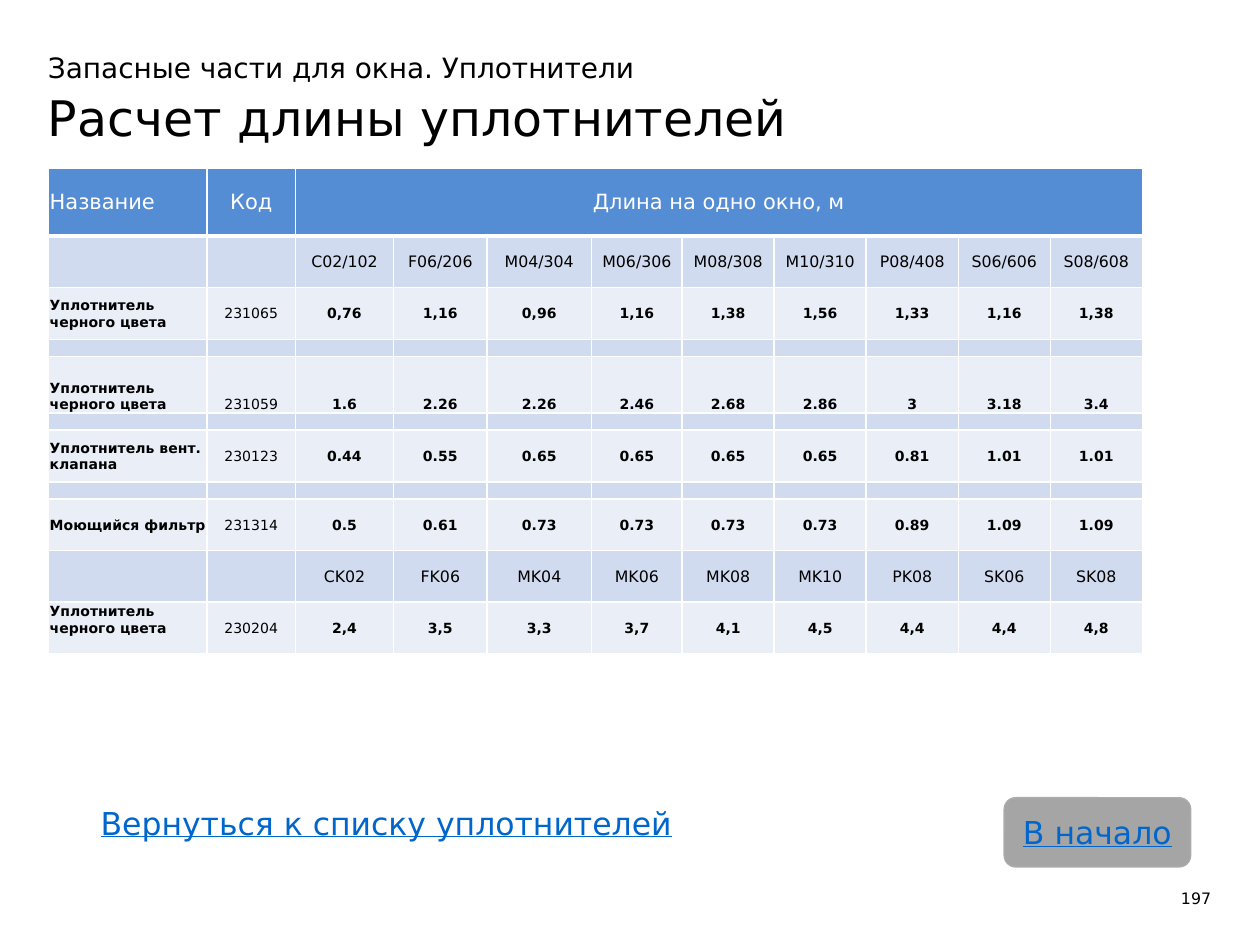
from lxml import etree
from pptx import Presentation
from pptx.dml.color import RGBColor
from pptx.enum.shapes import MSO_SHAPE as Preset
from pptx.enum.text import MSO_ANCHOR as Anchor, MSO_AUTO_SIZE as AutoSize, PP_ALIGN as Align
from pptx.oxml.ns import qn
from pptx.util import Pt

FONT = "DejaVu Sans"
BLACK = RGBColor(0, 0, 0)
WHITE = RGBColor(255, 255, 255)
HEADER_BLUE = RGBColor(0x54, 0x8D, 0xD4)
BAND_DARK = RGBColor(0xD1, 0xDB, 0xEF)
BAND_LIGHT = RGBColor(0xE9, 0xEE, 0xF7)
LINK_BLUE = RGBColor(0, 0x66, 0xCC)
BUTTON_GRAY = RGBColor(0xA5, 0xA5, 0xA5)
BUTTON_EDGE = RGBColor(0xAC, 0xAC, 0xAC)

COLUMN_WIDTHS = [90.7, 50.4, 56.2, 53.3, 59.8, 51.8] + [52.6] * 5
SEAL = "Уплотнитель черного цвета"
SPACER = (9.8, "spacer", [])
ROWS = [
    (38.9, "header", ["Название", "Код", "Длина на одно окно, м"]),
    (29.5, "sizes", ["", "", "C02/102", "F06/206", "M04/304", "M06/306", "M08/308",
                     "M10/310", "P08/408", "S06/606", "S08/608"]),
    (29.5, "lengths", [SEAL, "231065", "0,76", "1,16", "0,96", "1,16", "1,38",
                       "1,56", "1,33", "1,16", "1,38"]),
    SPACER,
    (32.4, "low lengths", [SEAL, "231059", "1.6", "2.26", "2.26", "2.46", "2.68",
                           "2.86", "3", "3.18", "3.4"]),
    SPACER,
    (29.5, "lengths", ["Уплотнитель вент. клапана", "230123", "0.44", "0.55", "0.65",
                       "0.65", "0.65", "0.65", "0.81", "1.01", "1.01"]),
    SPACER,
    (29.5, "lengths", ["Моющийся фильтр", "231314", "0.5", "0.61", "0.73", "0.73",
                       "0.73", "0.73", "0.89", "1.09", "1.09"]),
    (29.5, "sizes", ["", "", "CK02", "FK06", "MK04", "MK06", "MK08", "MK10",
                     "PK08", "SK06", "SK08"]),
    (29.5, "lengths", [SEAL, "230204", "2,4", "3,5", "3,3", "3,7", "4,1", "4,5",
                       "4,4", "4,4", "4,8"]),
]
ROW_STYLES = {
    "header": (HEADER_BLUE, WHITE, 12),
    "sizes": (BAND_DARK, BLACK, 9),
    "spacer": (BAND_DARK, BLACK, 7),
    "lengths": (BAND_LIGHT, BLACK, 8),
    "low lengths": (BAND_LIGHT, BLACK, 8),
}


def write(paragraph, text, size, color=BLACK, bold=False, underline=False, align=Align.LEFT):
    paragraph.alignment = align
    run = paragraph.add_run()
    run.text = text
    run.font.name = FONT
    run.font.size = Pt(size)
    run.font.bold = bold
    run.font.underline = underline
    run.font.color.rgb = color


def set_borders(cell, bottom_width):
    properties = cell._tc.get_or_add_tcPr()
    widths = {"a:lnL": 1, "a:lnR": 1, "a:lnT": 1, "a:lnB": bottom_width}
    for position, (tag, width) in enumerate(widths.items()):
        line = etree.Element(qn(tag), w=str(Pt(width)))
        fill = etree.SubElement(line, qn("a:solidFill"))
        etree.SubElement(fill, qn("a:srgbClr"), val=str(WHITE))
        properties.insert(position, line)


class SealSlide:
    def __init__(self, presentation):
        self.slide = presentation.slides.add_slide(presentation.slide_layouts[5])

    def set_margins(self, frame, bottom=0):
        frame.margin_left = frame.margin_right = frame.margin_top = 0
        frame.margin_bottom = Pt(bottom)

    def title(self, overline, heading, left, top, width, height):
        title = self.slide.shapes.title
        title.left, title.top, title.width, title.height = map(Pt, (left, top, width, height))
        frame = title.text_frame
        frame.auto_size = AutoSize.NONE
        frame.word_wrap = True
        frame.vertical_anchor = Anchor.BOTTOM
        self.set_margins(frame, 2.9)
        paragraph = frame.paragraphs[0]
        paragraph.line_spacing = 1.05
        write(paragraph, overline, 16)
        paragraph.add_line_break()
        write(paragraph, heading, 28)

    def text(self, text, left, top, width, height, size, margins=True, **style):
        box = self.slide.shapes.add_textbox(*map(Pt, (left, top, width, height)))
        frame = box.text_frame
        frame.word_wrap = True
        if not margins:
            self.set_margins(frame)
        write(frame.paragraphs[0], text, size, **style)

    def button(self, text, left, top, width, height):
        shape = self.slide.shapes.add_shape(
            Preset.FLOWCHART_ALTERNATE_PROCESS, *map(Pt, (left, top, width, height)))
        shape.shadow.inherit = False
        shape.fill.solid()
        shape.fill.fore_color.rgb = BUTTON_GRAY
        shape.line.color.rgb = BUTTON_EDGE
        shape.line.width = Pt(0.75)
        frame = shape.text_frame
        frame.vertical_anchor = Anchor.MIDDLE
        self.set_margins(frame)
        write(frame.paragraphs[0], text, 18, color=LINK_BLUE, underline=True, align=Align.CENTER)

    def cell(self, cell, text, kind, column):
        fill, color, size = ROW_STYLES[kind]
        cell.fill.solid()
        cell.fill.fore_color.rgb = fill
        set_borders(cell, 3 if kind == "header" else 1)
        cell.margin_left = cell.margin_right = cell.margin_top = Pt(0.7)
        cell.margin_bottom = 0
        cell.vertical_anchor = Anchor.BOTTOM if kind == "low lengths" else Anchor.MIDDLE
        paragraph = cell.text_frame.paragraphs[0]
        if text:
            write(paragraph, text, size, color=color,
                  bold="lengths" in kind and column != 1,
                  align=Align.CENTER if column else Align.LEFT)
        else:
            paragraph._p.get_or_add_endParaRPr().set("sz", str(size * 100))

    def table(self, left, top):
        height = sum(row[0] for row in ROWS)
        table = self.slide.shapes.add_table(
            len(ROWS), len(COLUMN_WIDTHS),
            *map(Pt, (left, top, sum(COLUMN_WIDTHS), height))).table
        for column, width in zip(table.columns, COLUMN_WIDTHS):
            column.width = Pt(width)
        for row_index, (row_height, kind, texts) in enumerate(ROWS):
            table.rows[row_index].height = Pt(row_height)
            for column in range(len(COLUMN_WIDTHS)):
                text = texts[column] if column < len(texts) else ""
                self.cell(table.cell(row_index, column), text, kind, column)
        table.cell(0, 2).merge(table.cell(0, len(COLUMN_WIDTHS) - 1))
        table.cell(len(ROWS) - 1, 0).margin_bottom = Pt(9.3)


def main():
    presentation = Presentation()
    presentation.slide_width, presentation.slide_height = Pt(720), Pt(540)
    page = SealSlide(presentation)
    page.title("Запасные части для окна. Уплотнители", "Расчет длины уплотнителей",
               27.4, 13, 553.7, 73.4)
    page.table(27.7, 96)
    page.text("197", 668.2, 507.6, 23.8, 17.3, 9, margins=False, align=Align.RIGHT)
    page.button("В начало", 573.8, 455.8, 106.6, 39.6)
    page.text("Вернуться к списку уплотнителей", 50.4, 455.8, 399.6, 28.8, 18,
              color=LINK_BLUE, underline=True)
    presentation.save("out.pptx")


if __name__ == "__main__":
    main()
